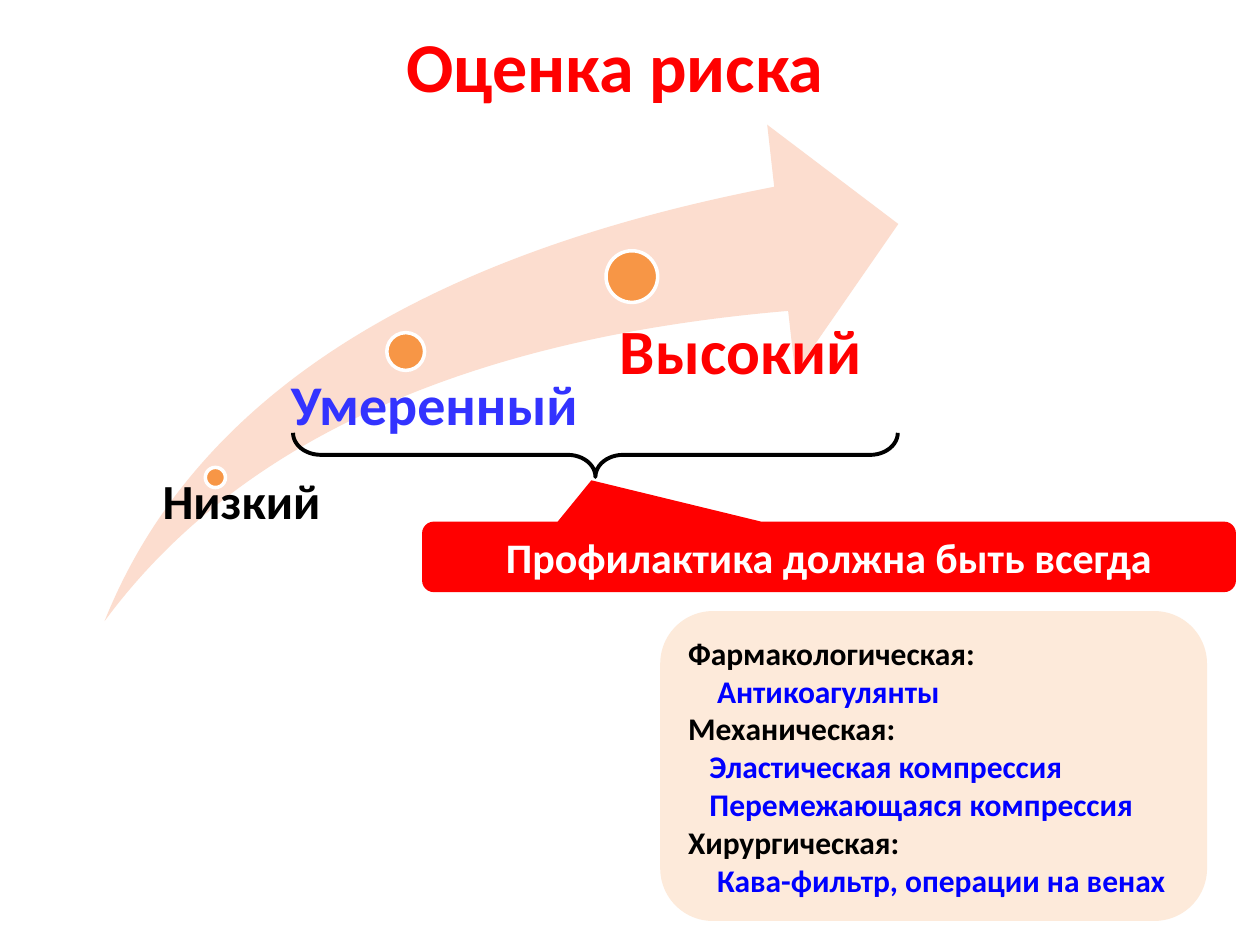
from dataclasses import dataclass

from pptx import Presentation
from pptx import util as u
from pptx.dml.color import RGBColor
from pptx.enum import shapes, text

RED, BLUE, BLACK, WHITE = "FF0000", "0000FF", "000000", "FFFFFF"
S = shapes.MSO_SHAPE
TOP, MIDDLE = text.MSO_ANCHOR.TOP, text.MSO_ANCHOR.MIDDLE
LEFT, CENTER = text.PP_ALIGN.LEFT, text.PP_ALIGN.CENTER
Box = tuple[float, float, float, float]


@dataclass
class Line:
    text: str
    size: float
    color: str
    indent: float = 0
    align: text.PP_ALIGN = LEFT
    spacing: float = 1.0


@dataclass
class Level:
    """One risk level: a dot on the arrow and its label."""
    dot: tuple[float, float, float]
    box: Box
    inset: float
    label: Line


LEVELS = [
    Level((1.63, 3.71, 0.16), (1.2, 3.79, 2.29, 1.14), 0.09,
          Line("Низкий", 28, BLACK, spacing=0.9)),
    Level((3.07, 2.64, 0.3), (2.15, 2.99, 3.4, 1.94), 0.16,
          Line("Умеренный", 32, "3333FF", spacing=0.9)),
    Level((4.81, 1.99, 0.41), (4.7, 2.54, 2.36, 2.39), 0.22,
          Line("Высокий", 36, RED, spacing=0.9)),
]

METHODS = [
    ("Фармакологическая:", 0.23, ["Антикоагулянты"]),
    ("Механическая:", 0.17,
     ["Эластическая компрессия", "Перемежающаяся компрессия"]),
    ("Хирургическая:", 0.23, ["Кава-фильтр, операции на венах"]),
]


def rgb(value: str) -> RGBColor:
    return RGBColor.from_string(value)


def write(sp, lines: list[Line], anchor=MIDDLE, insets: dict | None = None) -> None:
    tf = sp.text_frame
    settings = {"word_wrap": True, "vertical_anchor": anchor} | (insets or {})
    for name, value in settings.items():
        setattr(tf, name, value)
    for i, line in enumerate(lines):
        p = tf.add_paragraph() if i else tf.paragraphs[0]
        p.alignment, p.line_spacing = line.align, line.spacing
        if line.indent:
            p._p.get_or_add_pPr().set("marL", str(u.Inches(line.indent)))
        r = p.add_run()
        r.text = line.text
        font = {"name": "Calibri", "size": u.Pt(line.size), "bold": True}
        for name, value in font.items():
            setattr(r.font, name, value)
        r.font.color.rgb = rgb(line.color)


def add_text(parent, box: Box, line: Line, insets: dict | None = None) -> None:
    write(parent.add_textbox(*map(u.Inches, box)), [line], TOP, insets)


def add_shape(parent, kind, box: Box, fill: str | None = None,
              line: tuple[str, float] | None = None, adj: tuple = ()):
    sp = parent.add_shape(kind, *map(u.Inches, box))
    sp.shadow.inherit = False
    for i, value in enumerate(adj):
        sp.adjustments[i] = value
    if fill:
        sp.fill.solid()
        sp.fill.fore_color.rgb = rgb(fill)
    else:
        sp.fill.background()
    if line:
        sp.line.color.rgb = rgb(line[0])
        sp.line.width = u.Pt(line[1])
    else:
        sp.line.fill.background()
    return sp


def add_level(parent, level: Level) -> None:
    x, y, size = level.dot
    add_shape(parent, S.OVAL, (x, y, size, size), "F79646", (WHITE, 2))
    insets = {"margin_left": u.Inches(level.inset), "margin_top": 0,
              "margin_right": 0, "margin_bottom": 0}
    add_text(parent, level.box, level.label, insets)


def main() -> None:
    prs = Presentation()
    prs.slide_width, prs.slide_height = u.Inches(10), u.Inches(7.5)
    s = prs.slides.add_slide(prs.slide_layouts[6])

    # Title
    add_text(s.shapes, (1.06, 0.13, 7.64, 0.77),
             Line("Оценка риска", 40, RED, align=CENTER))

    # Callout
    callout = add_shape(s.shapes, S.ROUNDED_RECTANGULAR_CALLOUT,
                        (3.35, 4.14, 6.46, 0.56), RED, adj=(-0.292, -1.086, 0.167))
    write(callout, [Line("Профилактика должна быть всегда", 24, WHITE, align=CENTER)])

    # Prevention methods
    panel = add_shape(s.shapes, S.ROUNDED_RECTANGLE, (5.24, 4.85, 4.34, 2.46),
                      "FDEADA", adj=(0.17,))
    lines = []
    for heading, indent, items in METHODS:
        lines.append(Line(heading, 18, BLACK))
        lines += [Line(item, 18, BLUE, indent) for item in items]
    write(panel, lines)

    # Rising arrow with risk levels
    scale = s.shapes.add_group_shape().shapes
    add_shape(scale, S.SWOOSH_ARROW, (0.83, 0.99, 6.3, 3.94), "FCDDCF",
              adj=(0.25, 0.25))
    for level in LEVELS:
        add_level(scale, level)

    # Brace under the moderate and high levels
    brace = add_shape(s.shapes, S.RIGHT_BRACE, (4.55, 1.21, 0.35, 4.8),
                      line=(BLACK, 2.25), adj=(0.628, 0.5))
    brace.rotation = 90

    prs.save("out.pptx")


if __name__ == "__main__":
    main()
